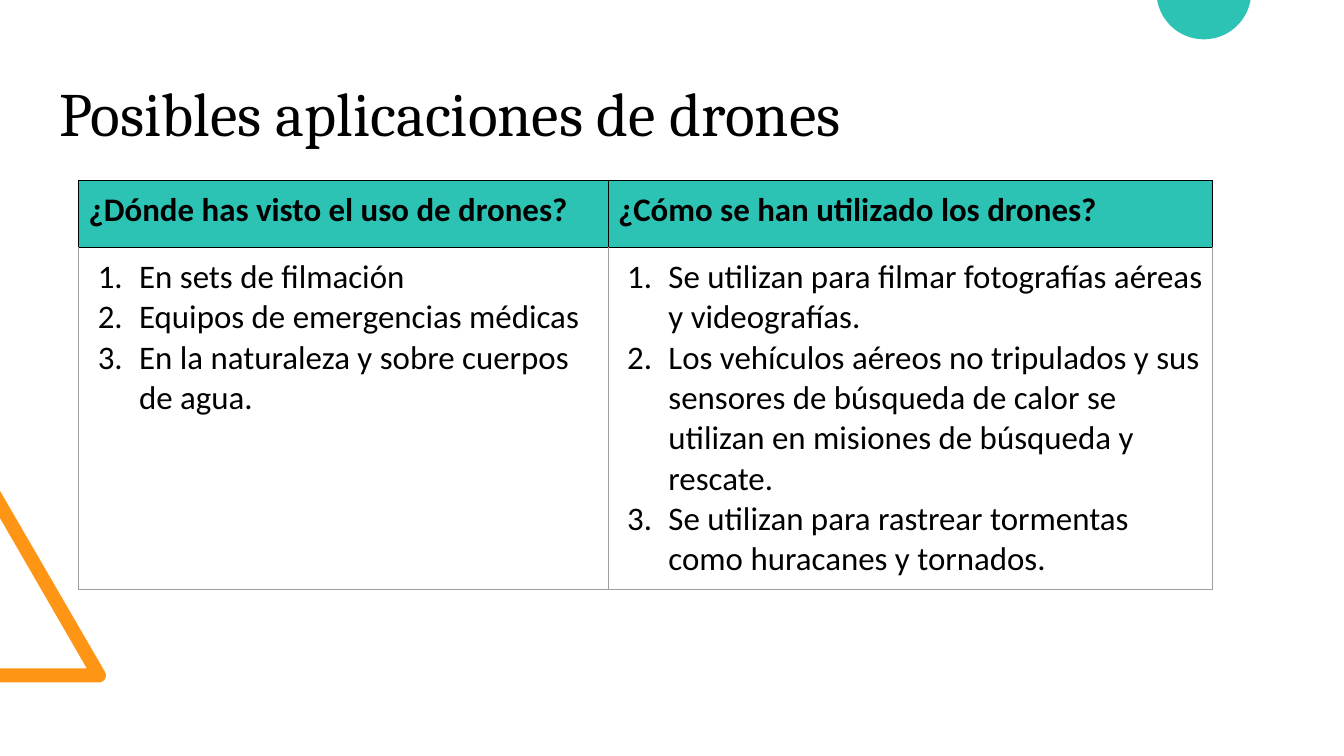
from math import asin, cos, degrees, radians, sin

from lxml.etree import SubElement as Sub
from pptx import Presentation
from pptx.dml.color import RGBColor as RGB
from pptx.enum.text import MSO_ANCHOR as Anchor
from pptx.oxml.ns import qn
from pptx.util import Inches, Pt

TEAL, ORANGE, BLACK, GREY = "2CC3B4", "FF9514", "000000", "9E9E9E"
HEADS = ["¿Dónde has visto el uso de drones?", "¿Cómo se han utilizado los drones?"]
LISTS = [
    ["En sets de filmación",
     "Equipos de emergencias médicas",
     "En la naturaleza y sobre cuerpos de agua."],
    ["Se utilizan para filmar fotografías aéreas y videografías.",
     "Los vehículos aéreos no tripulados y sus sensores de búsqueda de calor "
     "se utilizan en misiones de búsqueda y rescate.",
     "Se utilizan para rastrear tormentas como huracanes y tornados."],
]


def paint(fill, color):
    fill.solid()
    fill.fore_color.rgb = RGB.from_string(color)


def arc(x, y, r, start, end, steps=40):
    """Points on a circle, angles in degrees, clockwise on the slide."""
    turns = [radians(start + (end - start) * i / steps) for i in range(steps + 1)]
    return [(x + r * cos(t), y + r * sin(t)) for t in turns]


def edge(props, side, color):
    line = Sub(props, qn(f"a:ln{side}"), w=str(Pt(0.75)))
    Sub(Sub(line, qn("a:solidFill")), qn("a:srgbClr"), val=color)


def number(para):
    """Turn the paragraph into an item of a numbered list."""
    props = para._p.get_or_add_pPr()
    props.set("marL", str(Inches(0.5)))
    props.set("indent", str(Inches(-0.41)))
    Sub(Sub(props, qn("a:buClr")), qn("a:srgbClr"), val=BLACK)
    Sub(props, qn("a:buFont"), typeface="Calibri")
    Sub(props, qn("a:buAutoNum"), type="arabicPeriod")


class Deck:
    """Places elements on a grid whose columns and rows are 0.1 inch."""
    unit = Inches(0.1)
    title_font = {"name": "Cambria", "size": Pt(44), "bold": False}
    head_font = {"name": "Calibri", "size": Pt(23.5), "bold": True}
    body_font = {**head_font, "bold": False}

    def __init__(self):
        self.prs = Presentation()
        self.prs.slide_width, self.prs.slide_height = self.grid(133.3, 75)
        self.slide = self.prs.slides.add_slide(self.prs.slide_layouts[6])
        self.shapes = self.slide.shapes

    def grid(self, *cells):
        return [round(c * self.unit) for c in cells]

    def label(self, para, text, style):
        run = para.add_run()
        run.text = text
        for key, value in style.items():
            setattr(run.font, key, value)
        run.font.color.rgb = RGB.from_string(BLACK)

    def outline(self, points, color):
        dots = [self.grid(*p) for p in points]
        form = self.shapes.build_freeform(*dots[0], scale=1.0)
        form.add_line_segments(dots[1:], close=True)
        shape = form.convert_to_shape()
        shape.shadow.inherit = False
        shape.line.fill.background()
        paint(shape.fill, color)

    def title(self, text, *box):
        frame = self.shapes.add_textbox(*self.grid(*box)).text_frame
        frame.word_wrap = True
        frame.vertical_anchor = Anchor.MIDDLE
        para = frame.paragraphs[0]
        para.line_spacing = 0.9
        self.label(para, text, self.title_font)

    def cell(self, cell, lines, head):
        for side in ("left", "right", "top", "bottom"):
            setattr(cell, f"margin_{side}", self.unit)
        props = cell._tc.get_or_add_tcPr()
        for side in "LRTB":
            edge(props, side, BLACK if head or side == "T" else GREY)
        if head:
            paint(cell.fill, TEAL)
        else:
            cell.fill.background()
        frame = cell.text_frame
        for i, text in enumerate(lines):
            para = frame.add_paragraph() if i else frame.paragraphs[0]
            if not head:
                number(para)
            self.label(para, text, self.head_font if head else self.body_font)

    def table(self, heads, lists, left, top, cols, rows):
        box = self.grid(left, top, sum(cols), sum(rows))
        table = self.shapes.add_table(len(rows), len(cols), *box).table
        table.first_row = table.horz_banding = False
        for col, width in zip(table.columns, self.grid(*cols)):
            col.width = width
        for row, height in zip(table.rows, self.grid(*rows)):
            row.height = height
        for c, (head, items) in enumerate(zip(heads, lists)):
            self.cell(table.cell(0, c), [head], True)
            self.cell(table.cell(1, c), items, False)


def main():
    deck = Deck()
    corner = arc(9.8, 67, 0.7, -30, 90)
    deck.outline([(0, 67.7), (0, 66.3), (8.6, 66.3), (0, 51.4), (0, 48.7), *corner], ORANGE)
    dip = degrees(asin(0.8 / 4.7))
    deck.outline(arc(119.4, -0.8, 4.7, dip, 180 - dip), TEAL)
    deck.title("Posibles aplicaciones de drones", 4.9, 4.4, 118.4, 14.3)
    deck.table(HEADS, LISTS, 7.8, 17.9, cols=(52.5, 60), rows=(6.6, 34))
    deck.prs.save("out.pptx")


if __name__ == "__main__":
    main()
